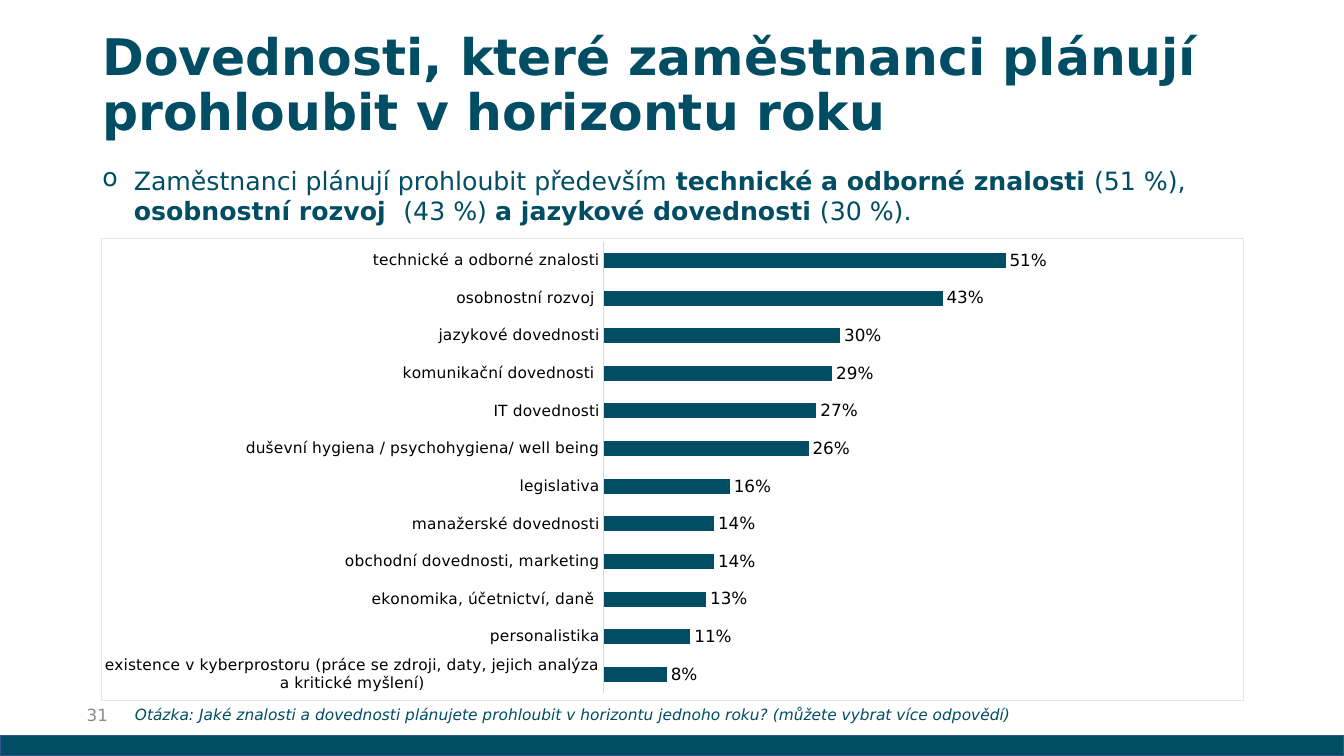
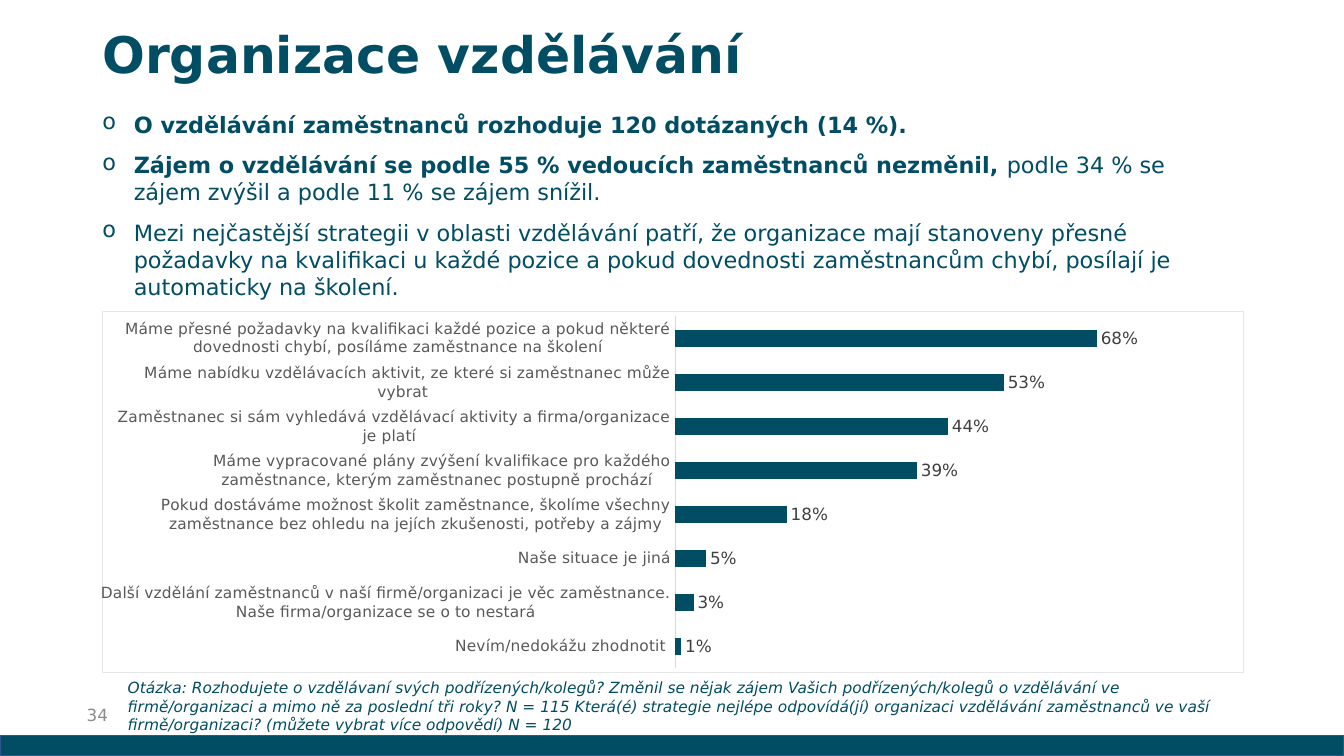
from pptx import Presentation
from pptx.chart.data import CategoryChartData
from pptx.dml.color import RGBColor
from pptx.enum.chart import XL_CHART_TYPE, XL_LABEL_POSITION, XL_TICK_MARK
from pptx.enum.shapes import MSO_SHAPE
from pptx.enum.text import MSO_ANCHOR, PP_ALIGN
from pptx.oxml import parse_xml
from pptx.oxml.ns import nsdecls, qn
from pptx.util import Pt
from lxml.etree import SubElement

COLORS = {
    "teal": "004D64", "band_line": "325491", "number": "8C8C8C", "axis": "D9D9D9",
    "border": "E7E6E6", "white": "FFFFFF", "black": "000000",
    "label": "404040", "category": "595959",
}
FONT = "DejaVu Sans"
SLIDE_W, SLIDE_H = 960, 540
BAND_H = 14.4
INDENT = 22.5
TITLE = {"size": Pt(36), "bold": True}
QUESTION = {"size": Pt(11), "italic": True}
FRAME = {"word_wrap": True}
MIDDLE = {"word_wrap": True, "vertical_anchor": MSO_ANCHOR.MIDDLE}

SKILLS = {
    "number": "31",
    "title": "Dovednosti, které zaměstnanci plánují prohloubit v horizontu roku",
    "title_box": (66, 9.5, 828, 104.5),
    "findings": [[
        ("Zaměstnanci plánují prohloubit především", False),
        (" technické a odborné znalosti ", True), ("(51 %), ", False),
        ("osobnostní rozvoj  ", True), ("(43 %) ", False),
        ("a jazykové dovednosti ", True), ("(30 %).", False),
    ]],
    "findings_box": (66, 114.5, 816.5, 51),
    "findings_size": 18,
    "space_before": 0,
    "chart_box": (72, 170, 816.5, 330.5),
    "plot": (0.44, 0.007, 0.414, 0.978),
    "scale_max": 0.6,
    "category_color": "black",
    "label_color": "black",
    "answers": [
        ("existence v kyberprostoru (práce se zdroji, daty, jejich analýza a kritické myšlení)", 0.08),
        ("personalistika", 0.11),
        (" ekonomika, účetnictví, daně ", 0.13),
        ("obchodní dovednosti, marketing", 0.14),
        ("manažerské dovednosti", 0.14),
        ("legislativa", 0.16),
        ("duševní hygiena / psychohygiena/ well being", 0.26),
        ("IT dovednosti", 0.27),
        (" komunikační dovednosti ", 0.29),
        ("jazykové dovednosti", 0.3),
        (" osobnostní rozvoj ", 0.43),
        ("technické a odborné znalosti", 0.51),
    ],
    "question": "Otázka: Jaké znalosti a dovednosti plánujete prohloubit v horizontu jednoho roku? "
                "(můžete vybrat více odpovědí)",
    "question_box": (89.3, 500.4, 739.5, 21),
}

ORGANISATION = {
    "number": "34",
    "title": "Organizace vzdělávání",
    "title_box": (66, -11.5, 828, 104.5),
    "findings": [
        [("O vzdělávání zaměstnanců rozhoduje 120 dotázaných (14 %).", True)],
        [("Zájem o vzdělávání se podle 55 % vedoucích zaměstnanců nezměnil, ", True),
         ("podle 34 % se zájem zvýšil a podle 11 % se zájem snížil.", False)],
        [("Mezi nejčastější strategii v oblasti vzdělávání patří, že organizace mají stanoveny "
          "přesné požadavky na kvalifikaci u každé pozice a pokud dovednosti zaměstnancům chybí, "
          "posílají je automaticky na školení.", False)],
    ],
    "findings_box": (66, 75.5, 816.5, 175.5),
    "findings_size": 16,
    "space_before": 10,
    "chart_box": (72, 222, 816.5, 258.5),
    "plot": (0.502, 0.014, 0.435, 0.976),
    "scale_max": 0.8,
    "category_color": "category",
    "label_color": "label",
    "answers": [
        (" Nevím/nedokážu zhodnotit ", 0.01),
        ("Další vzdělání zaměstnanců v naší firmě/organizaci je věc zaměstnance. "
         "Naše firma/organizace se o to nestará", 0.03),
        ("Naše situace je jiná", 0.05),
        ("Pokud dostáváme možnost školit zaměstnance, školíme všechny zaměstnance "
         "bez ohledu na jejích zkušenosti, potřeby a zájmy", 0.18),
        (" Máme vypracované plány zvýšení kvalifikace pro každého zaměstnance, "
         "kterým zaměstnanec postupně prochází ", 0.39),
        (" Zaměstnanec si sám vyhledává vzdělávací aktivity a firma/organizace je platí ", 0.44),
        (" Máme nabídku vzdělávacích aktivit, ze které si zaměstnanec může vybrat ", 0.53),
        ("Máme přesné požadavky na kvalifikaci každé pozice a pokud některé dovednosti chybí, "
         "posíláme zaměstnance na školení", 0.68),
    ],
    "question": "Otázka: Rozhodujete o vzdělávaní svých podřízených/kolegů? Změnil se nějak zájem "
                "Vašich podřízených/kolegů o vzdělávání ve firmě/organizaci a mimo ně za poslední "
                "tři roky? N = 115 Která(é) strategie nejlépe odpovídá(jí) organizaci vzdělávání "
                "zaměstnanců ve vaší firmě/organizaci? (můžete vybrat více odpovědí) N = 120",
    "question_box": (84.2, 481, 803.5, 47.5),
}


def rgb(name):
    """Return the named palette colour."""
    return RGBColor.from_string(COLORS[name])


def apply(target, values):
    """Set each attribute of target from a dict."""
    for attribute, value in values.items():
        setattr(target, attribute, value)


def style_font(font, values, color="teal"):
    """Give a font the deck typeface, a colour and its format values."""
    apply(font, {"name": FONT, **values})
    font.color.rgb = rgb(color)


def add_frame(slide, box, values):
    """Add a text box and return its text frame."""
    frame = slide.shapes.add_textbox(*map(Pt, box)).text_frame
    apply(frame, values)
    return frame


def add_line(slide, box, text, frame_values, font_values, color="teal", **layout):
    """Add a text box that holds one uniformly styled paragraph."""
    paragraph = add_frame(slide, box, frame_values).paragraphs[0]
    apply(paragraph, layout)
    run = paragraph.add_run()
    run.text = text
    style_font(run.font, font_values, color)


def add_findings(slide, box, findings, size, space_before):
    """Add the bulleted findings with their bold phrases."""
    frame = add_frame(slide, box, FRAME)
    for index, phrases in enumerate(findings):
        paragraph = frame.add_paragraph() if index else frame.paragraphs[0]
        paragraph.space_before = Pt(space_before)
        properties = paragraph._p.get_or_add_pPr()
        properties.set("marL", str(Pt(INDENT)))
        properties.set("indent", str(-Pt(INDENT)))
        SubElement(properties, qn("a:buChar")).set("char", "o")
        for text, bold in phrases:
            run = paragraph.add_run()
            run.text = text
            style_font(run.font, {"size": Pt(size), "bold": bold})


def add_footer(slide, box, number):
    """Add the bottom band and the page number above it."""
    left, top, width, height = box
    band = slide.shapes.add_shape(MSO_SHAPE.RECTANGLE, *map(Pt, box))
    band.shadow.inherit = False
    band.fill.solid()
    band.fill.fore_color.rgb = rgb("teal")
    band.line.color.rgb = rgb("band_line")
    band.line.width = Pt(1)
    add_line(slide, (left + 47.5, top - 29.5, 36.7, 28.8), number, MIDDLE,
             {"size": Pt(12)}, "number", alignment=PP_ALIGN.RIGHT)


def frame_chart(chart, plot):
    """Set the chart border and the inner plot area."""
    border = parse_xml(
        f'<c:spPr {nsdecls("c", "a")}>'
        f'<a:solidFill><a:srgbClr val="{COLORS["white"]}"/></a:solidFill>'
        f'<a:ln w="{Pt(0.75)}"><a:solidFill><a:srgbClr val="{COLORS["border"]}"/></a:solidFill></a:ln>'
        '</c:spPr>')
    chart_element = chart._chartSpace.find(qn("c:chart"))
    chart_element.addnext(border)
    plot_area = chart_element.find(qn("c:plotArea"))
    for old_layout in plot_area.findall(qn("c:layout")):
        plot_area.remove(old_layout)
    layout = parse_xml(f'<c:layout {nsdecls("c")}><c:manualLayout/></c:layout>')
    settings = {"layoutTarget": "inner", "xMode": "edge", "yMode": "edge",
                **dict(zip("xywh", plot))}
    for tag, value in settings.items():
        SubElement(layout[0], qn(f"c:{tag}")).set("val", str(value))
    plot_area.insert(0, layout)


def add_answers(slide, box, content):
    """Add the bar chart of answer shares."""
    data = CategoryChartData(number_format="0%")
    data.categories = [answer for answer, _ in content["answers"]]
    data.add_series("Series 1", [share for _, share in content["answers"]])
    chart = slide.shapes.add_chart(XL_CHART_TYPE.BAR_CLUSTERED, *map(Pt, box), data).chart
    apply(chart, {"has_legend": False, "has_title": False})
    style_font(chart.font, {"size": Pt(11)}, "black")
    apply(chart.value_axis, {"minimum_scale": 0, "maximum_scale": content["scale_max"],
                             "has_major_gridlines": False, "visible": False})
    answer_axis = chart.category_axis
    apply(answer_axis, {"major_tick_mark": XL_TICK_MARK.NONE, "minor_tick_mark": XL_TICK_MARK.NONE,
                        "has_major_gridlines": False})
    answer_axis.format.line.color.rgb = rgb("axis")
    answer_axis.format.line.width = Pt(0.75)
    style_font(answer_axis.tick_labels.font, {"size": Pt(11)}, content["category_color"])
    bars = chart.plots[0]
    apply(bars, {"gap_width": 150, "vary_by_categories": False, "has_data_labels": True})
    apply(bars.data_labels, {"show_value": True, "number_format": "0%",
                             "number_format_is_linked": False,
                             "position": XL_LABEL_POSITION.OUTSIDE_END})
    style_font(bars.data_labels.font, {"size": Pt(12)}, content["label_color"])
    shares = bars.series[0]
    shares.format.fill.solid()
    shares.format.fill.fore_color.rgb = rgb("teal")
    frame_chart(chart, content["plot"])


def add_survey_slide(deck, content):
    """Build one survey slide from its content."""
    slide = deck.slides.add_slide(deck.slide_layouts[6])
    add_line(slide, content["title_box"], content["title"], MIDDLE, TITLE, line_spacing=0.9)
    add_footer(slide, (0, SLIDE_H - BAND_H, SLIDE_W, BAND_H), content["number"])
    add_answers(slide, content["chart_box"], content)
    add_findings(slide, content["findings_box"], content["findings"],
                 content["findings_size"], content["space_before"])
    add_line(slide, content["question_box"], content["question"], FRAME, QUESTION)


def main():
    """Build and save the deck."""
    deck = Presentation()
    apply(deck, {"slide_width": Pt(SLIDE_W), "slide_height": Pt(SLIDE_H)})
    for content in (SKILLS, ORGANISATION):
        add_survey_slide(deck, content)
    deck.save("out.pptx")


if __name__ == "__main__":
    main()
